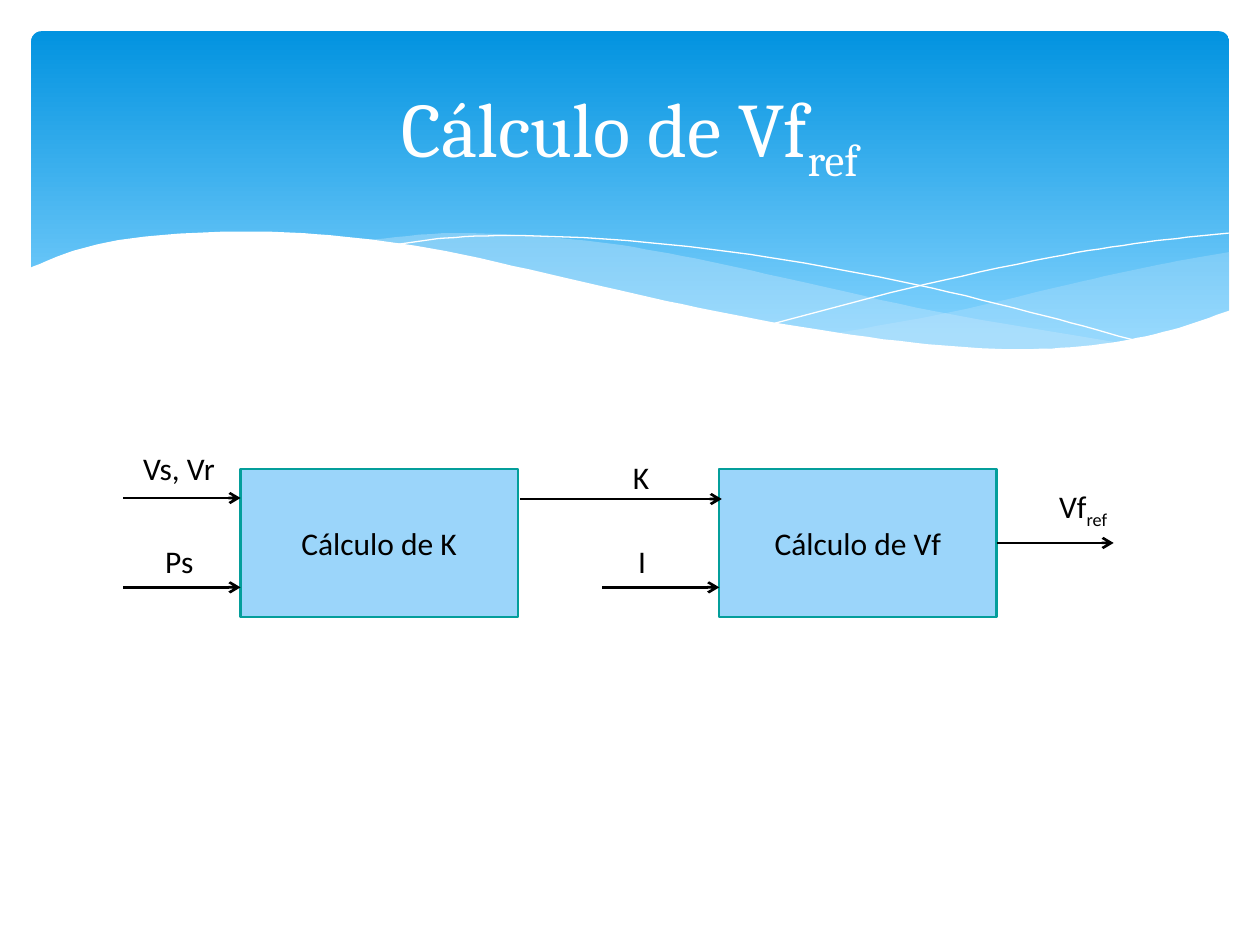
"""Build the slide showing how Vf ref is calculated from two chained blocks."""
from lxml import etree
from pptx import Presentation
from pptx import util as u
from pptx.dml.color import RGBColor
from pptx.enum import shapes, text
from pptx.oxml.ns import qn

WHITE = RGBColor(0xFF, 0xFF, 0xFF)
BLACK = RGBColor(0, 0, 0)
SKY_TOP = RGBColor(0x02, 0x93, 0xE0)
SKY_BOTTOM = RGBColor(0x83, 0xD3, 0xFE)
VEIL = RGBColor(0xC6, 0xE7, 0xFC)
BLOCK_FILL = RGBColor(0x9B, 0xD5, 0xFA)
BLOCK_EDGE = RGBColor(0x04, 0x9E, 0x9B)

TITLE = ("Cálculo de Vf", "ref")
BLOCK_TOP, BLOCK_WIDTH, BLOCK_HEIGHT = 9.45, 5.59, 2.99
K_LEFT, VF_LEFT = 4.85, 14.5
BLOCKS = [("Cálculo de K", K_LEFT), ("Cálculo de Vf", VF_LEFT)]
ARROW_LENGTH = 2.36
UPPER, MIDDLE, LOWER = 10.04, BLOCK_TOP + BLOCK_HEIGHT / 2, 11.84
ARROWS = [
    (K_LEFT - ARROW_LENGTH, K_LEFT, UPPER),
    (K_LEFT - ARROW_LENGTH, K_LEFT, LOWER),
    (10.49, 14.55, UPPER + 0.02),
    (VF_LEFT - ARROW_LENGTH, VF_LEFT, LOWER),
    (VF_LEFT + BLOCK_WIDTH, VF_LEFT + BLOCK_WIDTH + ARROW_LENGTH, MIDDLE),
]
LABELS = [
    (("Vs, Vr",), 2.62, 8.92, 1.98),
    (("Ps",), 3.07, 10.8, 1.09),
    (("K",), 11.91, 9.09, 2.03),
    (("I",), 12.6, 10.8, 0.69),
    (("Vf", "ref"), 21.06, 9.73, 1.55),
]

VEILS = [
    (29,
     [(16.79, 6.73), (19.13, 6.3), (21.87, 5.66), (23.39, 5.33), (24.79, 5.08)],
     [(16.79, 6.73), (18.26, 6.91), (20.4, 7.06), (22.38, 6.93), (23.75, 6.65), (24.79, 6.27)]),
    (40,
     [(7.26, 4.85), (9.17, 4.7), (11.81, 4.85), (13.74, 5.16), (15.98, 5.64),
      (18.82, 6.27), (22.68, 6.93)],
     [(7.26, 4.85), (9.19, 5.16), (11.4, 5.64), (14.38, 6.3), (17.27, 6.81),
      (19.94, 7.06), (22.68, 6.93)]),
]
STRANDS = [
    [(7.85, 4.95), (8.97, 4.8), (10.57, 4.75), (12.95, 4.88), (15.44, 5.18),
     (18.47, 5.74), (21.11, 6.38), (23.04, 6.91)],
    [(15.57, 6.53), (18.29, 5.82), (21.23, 5.18), (23.11, 4.88), (24.77, 4.7)],
]
SHORE = [(0.58, 5.41), (1.5, 5.05), (2.69, 4.8), (4.5, 4.67), (6.35, 4.72), (8.64, 5),
         (11.35, 5.59), (13.44, 6.07), (15.9, 6.55), (18.44, 6.91), (20.55, 7.04),
         (22.23, 6.93), (23.62, 6.65), (24.82, 6.25)]
SHORE_BASE = [(0.58, 8.36), (24.82, 8.36)]


def smooth(knots, steps=8):
    """Return points of a cubic Hermite curve through the knots."""
    last = len(knots) - 1
    slopes = []
    for i in range(last + 1):
        (x0, y0), (x1, y1) = knots[max(i - 1, 0)], knots[min(i + 1, last)]
        slopes.append((y1 - y0) / (x1 - x0))
    points = [knots[0]]
    for i in range(last):
        (x0, y0), (x1, y1) = knots[i], knots[i + 1]
        run = x1 - x0
        for step in range(1, steps + 1):
            t = step / steps
            ease = t * t * (3 - 2 * t)
            bend = t * (1 - t) ** 2 * slopes[i] - t * t * (1 - t) * slopes[i + 1]
            points.append((x0 + run * t, y0 + (y1 - y0) * ease + run * bend))
    return points


def add_outline(slide, points, close):
    scaled = [(round(x * 100), round(y * 100)) for x, y in points]
    builder = slide.shapes.build_freeform(*scaled[0], scale=u.Cm(0.01))
    builder.add_line_segments(scaled[1:], close=close)
    outline = builder.convert_to_shape()
    outline.shadow.inherit = False
    return outline


def add_area(slide, upper, lower, color, opacity=100):
    area = add_outline(slide, smooth(upper) + smooth(lower)[::-1], True)
    area.fill.solid()
    area.fill.fore_color.rgb = color
    area.line.fill.background()
    if opacity < 100:
        tint = area.fill._xPr.find(qn("a:solidFill"))[0]
        etree.SubElement(tint, qn("a:alpha"), val=str(opacity * 1000))


def add_strand(slide, knots):
    strand = add_outline(slide, smooth(knots), False)
    strand.fill.background()
    strand.line.color.rgb = WHITE
    strand.line.width = u.Pt(0)


def write(frame, parts, size, font, color):
    """Write the first part as normal text and any second part as subscript."""
    frame.vertical_anchor = text.MSO_ANCHOR.MIDDLE
    paragraph = frame.paragraphs[0]
    paragraph.alignment = text.PP_ALIGN.CENTER
    for index, part in enumerate(parts):
        run = paragraph.add_run()
        run.text = part
        run.font.size = u.Pt(size)
        run.font.name = font
        run.font.color.rgb = color
        if index:
            run.font._element.set("baseline", "-25000")


def add_banner(slide):
    sky = slide.shapes.add_shape(shapes.MSO_SHAPE.ROUNDED_RECTANGLE,
                                 u.Cm(0.63), u.Cm(0.63), u.Cm(24.15), u.Cm(6.86))
    sky.adjustments[0] = 0.03
    sky.shadow.inherit = False
    sky.line.fill.background()
    sky.fill.gradient()
    sky.fill.gradient_angle = 270
    for stop, color, position in zip(sky.fill.gradient_stops, (SKY_TOP, SKY_BOTTOM), (0, 0.9)):
        stop.color.rgb = color
        stop.position = position
    for opacity, upper, lower in VEILS:
        add_area(slide, upper, lower, VEIL, opacity)
    for knots in STRANDS:
        add_strand(slide, knots)
    add_area(slide, SHORE, SHORE_BASE, WHITE)


def add_title(slide):
    title = slide.shapes.title
    slide.shapes._spTree.append(title._element)
    title.left, title.top, title.width, title.height = map(u.Cm, (1.27, 0.94, 22.86, 3.48))
    write(title.text_frame, TITLE, 44, "Cambria", WHITE)


def add_block(slide, caption, left):
    block = slide.shapes.add_shape(shapes.MSO_SHAPE.RECTANGLE, u.Cm(left), u.Cm(BLOCK_TOP),
                                   u.Cm(BLOCK_WIDTH), u.Cm(BLOCK_HEIGHT))
    block.shadow.inherit = False
    block.fill.solid()
    block.fill.fore_color.rgb = BLOCK_FILL
    block.line.color.rgb = BLOCK_EDGE
    block.line.width = u.Pt(1.25)
    write(block.text_frame, (caption,), 18, "Calibri", BLACK)


def add_arrow(slide, start, end, height):
    arrow = slide.shapes.add_connector(shapes.MSO_CONNECTOR.STRAIGHT,
                                       u.Cm(start), u.Cm(height), u.Cm(end), u.Cm(height))
    arrow.line.color.rgb = BLACK
    arrow.line.width = u.Pt(1.5)
    etree.SubElement(arrow.line._get_or_add_ln(), qn("a:tailEnd"), type="arrow")
    etree.SubElement(arrow._element.spPr, qn("a:effectLst"))


def add_label(slide, parts, left, top, width):
    label = slide.shapes.add_textbox(u.Cm(left), u.Cm(top), u.Cm(width), u.Cm(1.03))
    label.text_frame.word_wrap = False
    write(label.text_frame, parts, 18, "Calibri", BLACK)


def main():
    deck = Presentation()
    deck.slide_width, deck.slide_height = u.Cm(25.4), u.Cm(19.05)
    slide = deck.slides.add_slide(deck.slide_layouts[5])
    add_banner(slide)
    add_title(slide)
    for block in BLOCKS:
        add_block(slide, *block)
    for arrow in ARROWS:
        add_arrow(slide, *arrow)
    for label in LABELS:
        add_label(slide, *label)
    deck.save("out.pptx")


if __name__ == "__main__":
    main()
